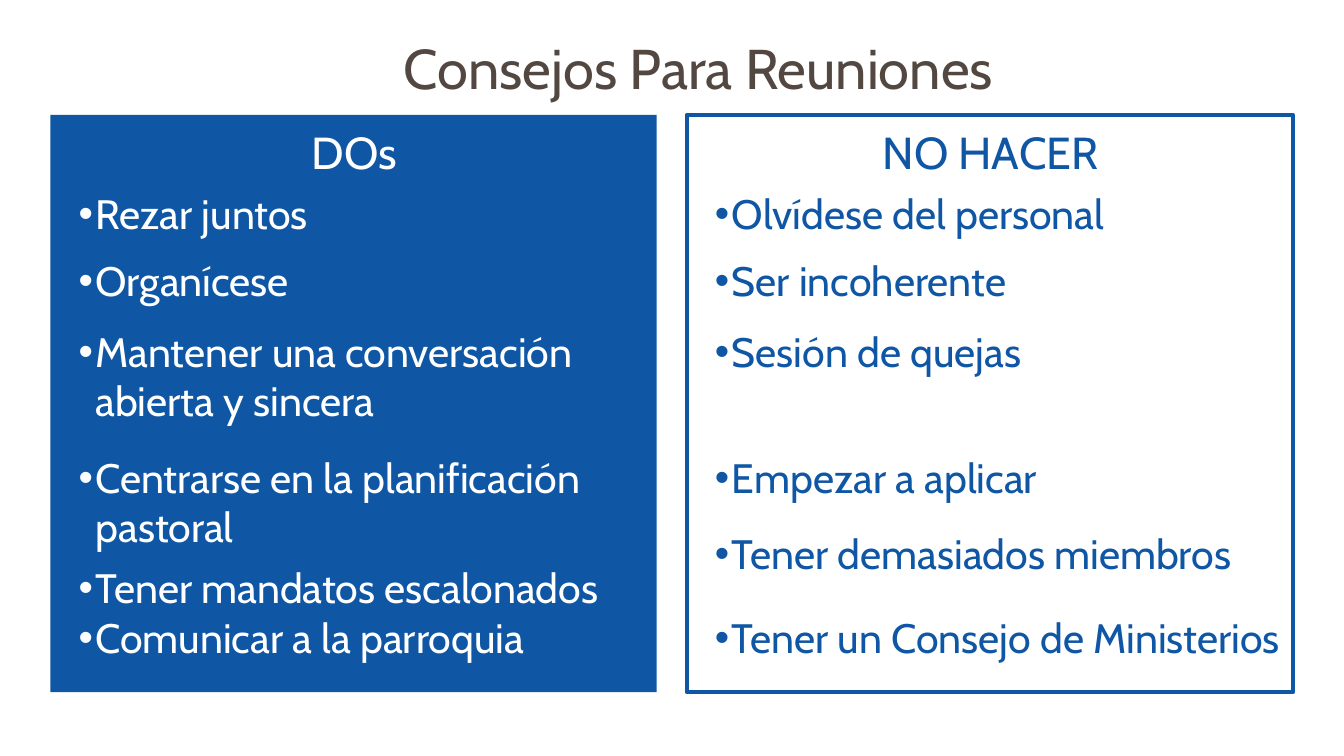
from lxml import etree
from pptx import Presentation
from pptx.dml.color import RGBColor
from pptx.enum.shapes import MSO_SHAPE
from pptx.enum.text import MSO_AUTO_SIZE, PP_ALIGN
from pptx.oxml.ns import qn
from pptx.util import Pt

RECTANGLE = MSO_SHAPE.RECTANGLE
GROW = MSO_AUTO_SIZE.SHAPE_TO_FIT_TEXT
CENTER, LEFT = PP_ALIGN.CENTER, PP_ALIGN.LEFT
PX = 9144  # 100 px to the inch

THEME = {
    "font": "Cabin",
    "blue": RGBColor.from_string("0F57A5"),
    "white": RGBColor.from_string("FFFFFF"),
    "brown": RGBColor.from_string("534741"),
    "title": Pt(60),
    "heading": Pt(48),
    "item": Pt(44),
    "heading_line": Pt(67.2),
    "border": Pt(4.5),
}


def add_text(page, text, place, size, color, para_format):
    box = page.shapes.add_textbox(*(value * PX for value in place))
    frame = box.text_frame
    frame_format = {"word_wrap": True, "auto_size": GROW, "margin_left": 0,
                    "margin_top": 0, "margin_right": 0, "margin_bottom": 0}
    for name, value in frame_format.items():
        setattr(frame, name, value)
    para = frame.paragraphs[0]
    for name, value in para_format.items():
        setattr(para, name, value)
    span = para.add_run()
    span.text = text
    for name, value in {"name": THEME["font"], "size": THEME[size]}.items():
        setattr(span.font, name, value)
    span.font.color.rgb = THEME[color]
    return para


def add_bullet(para):
    properties = para._p.get_or_add_pPr()
    properties.set("marL", str(50 * PX))
    properties.set("indent", str(-25 * PX))
    etree.SubElement(properties, qn("a:buFont")).set("typeface", "Arial")
    etree.SubElement(properties, qn("a:buChar")).set("char", "•")


deck = Presentation()
deck.slide_width, deck.slide_height = 2000 * PX, 1125 * PX
page = deck.slides.add_slide(deck.slide_layouts[6])
page.background.fill.solid()
page.background.fill.fore_color.rgb = THEME["white"]

# Title
heading_format = {"alignment": CENTER, "line_spacing": THEME["heading_line"]}
add_text(page, "Consejos Para Reuniones ", (586, 57, 925, 94), "title", "brown",
         heading_format)

# Columns: each item is top, width, height, text
columns = [
    {"heading": "DOs", "left": 75, "text_left": 92, "color": "white",
     "filled": True, "items": [
         (281, 864, 74, "Rezar juntos"),
         (380, 864, 74, "Organícese"),
         (486, 864, 148, "Mantener una conversación abierta y sincera"),
         (673, 908, 148, "Centrarse en la planificación pastoral"),
         (837, 864, 74, "Tener mandatos escalonados"),
         (911, 864, 74, "Comunicar a la parroquia")]},
    {"heading": "NO HACER", "left": 1022, "text_left": 1039, "color": "blue",
     "filled": False, "items": [
         (281, 870, 74, "Olvídese del personal"),
         (380, 870, 74, "Ser incoherente"),
         (486, 870, 74, "Sesión de quejas"),
         (673, 870, 74, "Empezar a aplicar"),
         (786, 870, 74, "Tener demasiados miembros"),
         (911, 907, 74, "Tener un Consejo de Ministerios")]},
]

for column in columns:
    # Panel
    panel = page.shapes.add_shape(RECTANGLE, column["left"] * PX, 171 * PX,
                                  902 * PX, 859 * PX)
    panel.shadow.inherit = False
    if column["filled"]:
        panel.fill.solid()
        panel.fill.fore_color.rgb = THEME["blue"]
        panel.line.fill.background()
    else:
        panel.fill.background()
        panel.line.color.rgb = THEME["blue"]
        panel.line.width = THEME["border"]

    # Heading, centred on the panel
    add_text(page, column["heading"], (column["left"] + 209, 172, 486, 88),
             "heading", column["color"], heading_format)

    # Bulleted items
    for top, width, height, text in column["items"]:
        para = add_text(page, text, (column["text_left"], top, width, height),
                        "item", column["color"], {"alignment": LEFT, "level": 1})
        add_bullet(para)

deck.save("out.pptx")
